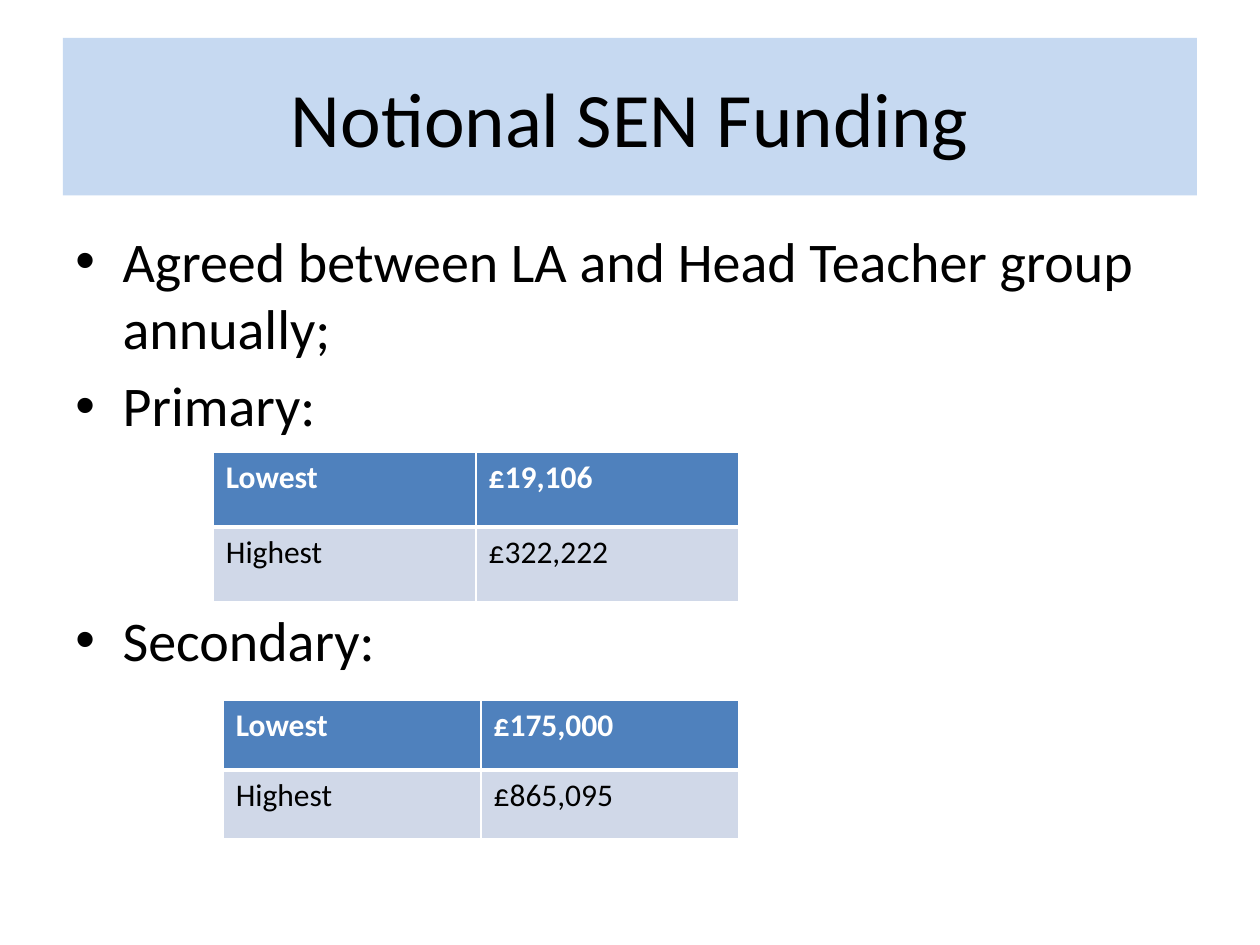
from lxml import etree
from pptx import Presentation
from pptx.dml.color import RGBColor
from pptx.enum import shapes, text
from pptx.oxml.ns import qn
from pptx.util import Pt


def color(value):
    return RGBColor.from_string(value)


def add_border(cell, side, width):
    line = etree.SubElement(cell._tc.get_or_add_tcPr(), qn(f"a:ln{side}"), w=str(Pt(width)))
    fill = etree.SubElement(line, qn("a:solidFill"))
    etree.SubElement(fill, qn("a:srgbClr"), val="FFFFFF")


deck = Presentation()
deck.slide_width, deck.slide_height = Pt(720), Pt(540)
page = deck.slides.add_slide(deck.slide_layouts[6])

# Title band
title = page.shapes.add_shape(shapes.MSO_SHAPE.RECTANGLE, Pt(36), Pt(21.6), Pt(648), Pt(90))
title.shadow.inherit = False
title.fill.solid()
title.fill.fore_color.rgb = color("C6D9F1")
title.line.fill.background()
title.text_frame.text = "Notional SEN Funding"
title.text_frame.vertical_anchor = text.MSO_ANCHOR.MIDDLE
para = title.text_frame.paragraphs[0]
para.alignment = text.PP_ALIGN.CENTER
para.font.name, para.font.size = "Calibri", Pt(44)
para.font.color.rgb = color("000000")

# Bullets, with room for a table before the last one
body = page.shapes.add_textbox(Pt(36), Pt(126), Pt(648), Pt(356.4))
body.text_frame.word_wrap = True
body.text_frame.text = "Agreed between LA and Head Teacher group annually;\nPrimary:\nSecondary:"
for para, gap in zip(body.text_frame.paragraphs, (0, 5.6, 95.4)):
    properties = para._p.get_or_add_pPr()
    properties.set("marL", str(Pt(27)))
    properties.set("indent", str(Pt(-27)))
    etree.SubElement(properties, qn("a:buFont"), typeface="Arial")
    etree.SubElement(properties, qn("a:buChar"), char="•")
    para.space_before = Pt(gap)
    para.font.name, para.font.size = "Calibri", Pt(32)
    para.font.color.rgb = color("000000")

# Funding tables: left, top, column width, row height, lowest, highest
funding = [
    (121.9, 258.6, 150.2, 42.6, "£19,106", "£322,222"),
    (127.6, 400.3, 147.3, 39.6, "£175,000", "£865,095"),
]
for left, top, width, height, lowest, highest in funding:
    table = page.shapes.add_table(2, 2, Pt(left), Pt(top), Pt(2 * width), Pt(2 * height)).table
    rows = [
        (("Lowest", lowest), "4F81BD", "FFFFFF", True),
        (("Highest", highest), "D0D8E8", "000000", False),
    ]
    for row, (labels, fill, ink, header) in enumerate(rows):
        for column, label in enumerate(labels):
            cell = table.cell(row, column)
            cell.text = label
            for side in "LRTB":
                thick = (side == "B") if header else (side == "T")
                add_border(cell, side, 3 if thick else 1)
            cell.fill.solid()
            cell.fill.fore_color.rgb = color(fill)
            span = cell.text_frame.paragraphs[0].runs[0]
            span.font.name, span.font.size = "Calibri", Pt(18)
            span.font.bold = header
            span.font.color.rgb = color(ink)

deck.save("out.pptx")
